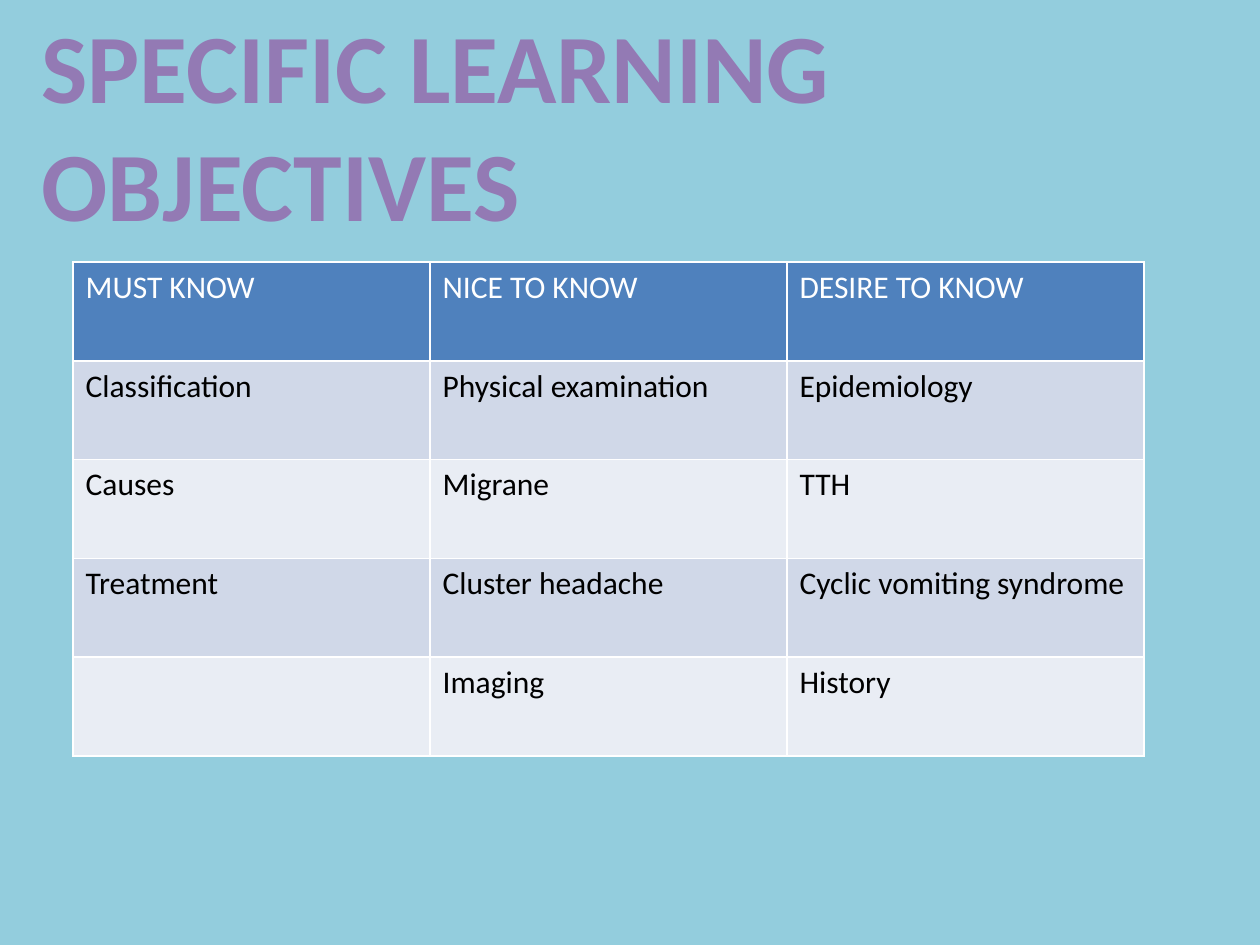
from dataclasses import dataclass

from pptx import Presentation
from pptx.dml.color import RGBColor
from pptx.enum.text import MSO_ANCHOR, MSO_AUTO_SIZE, PP_ALIGN
from pptx.util import Inches, Pt

BOTTOM = MSO_ANCHOR.BOTTOM
LEFT = PP_ALIGN.LEFT
NO_FIT = MSO_AUTO_SIZE.NONE
TITLE_ONLY = 5


@dataclass(frozen=True)
class Theme:
    font: str = "Calibri"
    title_size: int = 56
    table_size: int = 18
    background: str = "93CDDD"
    title: str = "937AB4"
    header: str = "4F81BD"
    header_text: str = "FFFFFF"
    bands: tuple = ("D0D8E8", "E9EDF4")
    text: str = "000000"


THEME = Theme()

OBJECTIVES = [
    ("MUST KNOW", "NICE TO KNOW", "DESIRE TO KNOW"),
    ("Classification", "Physical examination", "Epidemiology"),
    ("Causes", "Migrane", "TTH"),
    ("Treatment", "Cluster headache", "Cyclic vomiting syndrome"),
    ("", "Imaging", "History"),
]


def set_font(p, size, color, bold=False):
    p.font.name = THEME.font
    p.font.size = Pt(size)
    p.font.bold = bold
    p.font.color.rgb = RGBColor.from_string(color)


def paint(fill, color):
    fill.solid()
    fill.fore_color.rgb = RGBColor.from_string(color)


def add_title(s, text, x, y, w, h):
    sp = s.shapes.title
    sp.left, sp.top, sp.width, sp.height = map(Inches, (x, y, w, h))
    tf = sp.text_frame
    tf.text = text
    tf.word_wrap = True
    tf.auto_size = NO_FIT
    tf.vertical_anchor = BOTTOM
    tf.margin_left = tf.margin_top = tf.margin_right = tf.margin_bottom = 0
    p = tf.paragraphs[0]
    p.alignment = LEFT
    set_font(p, THEME.title_size, THEME.title, bold=True)


def add_objectives_table(s, rows, x, y, w, h):
    # The default table style supplies the white grid lines
    table = s.shapes.add_table(len(rows), len(rows[0]),
                               *map(Inches, (x, y, w, h))).table
    for i, row in enumerate(rows):
        is_header = i == 0
        fill = THEME.header if is_header else THEME.bands[(i - 1) % 2]
        color = THEME.header_text if is_header else THEME.text
        for j, text in enumerate(row):
            cell = table.cell(i, j)
            cell.text = text
            paint(cell.fill, fill)
            set_font(cell.text_frame.paragraphs[0], THEME.table_size, color)


def main():
    prs = Presentation()
    prs.slide_width, prs.slide_height = Inches(10), Inches(7.5)
    s = prs.slides.add_slide(prs.slide_layouts[TITLE_ONLY])
    paint(s.background.fill, THEME.background)
    add_title(s, "SPECIFIC LEARNING OBJECTIVES", 0.33, 0.42, 8.5, 1.49)
    add_objectives_table(s, OBJECTIVES, 0.58, 2.08, 8.5, 3.92)
    prs.save("out.pptx")


if __name__ == "__main__":
    main()
